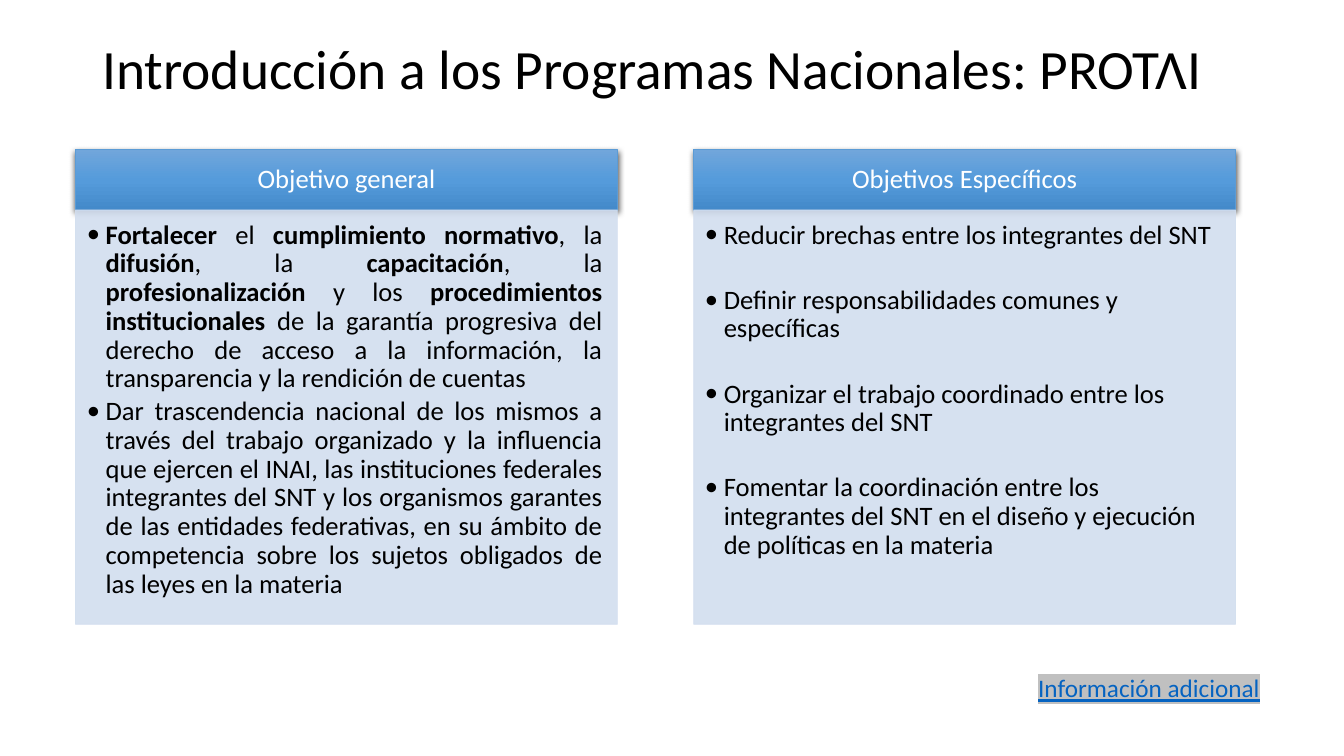
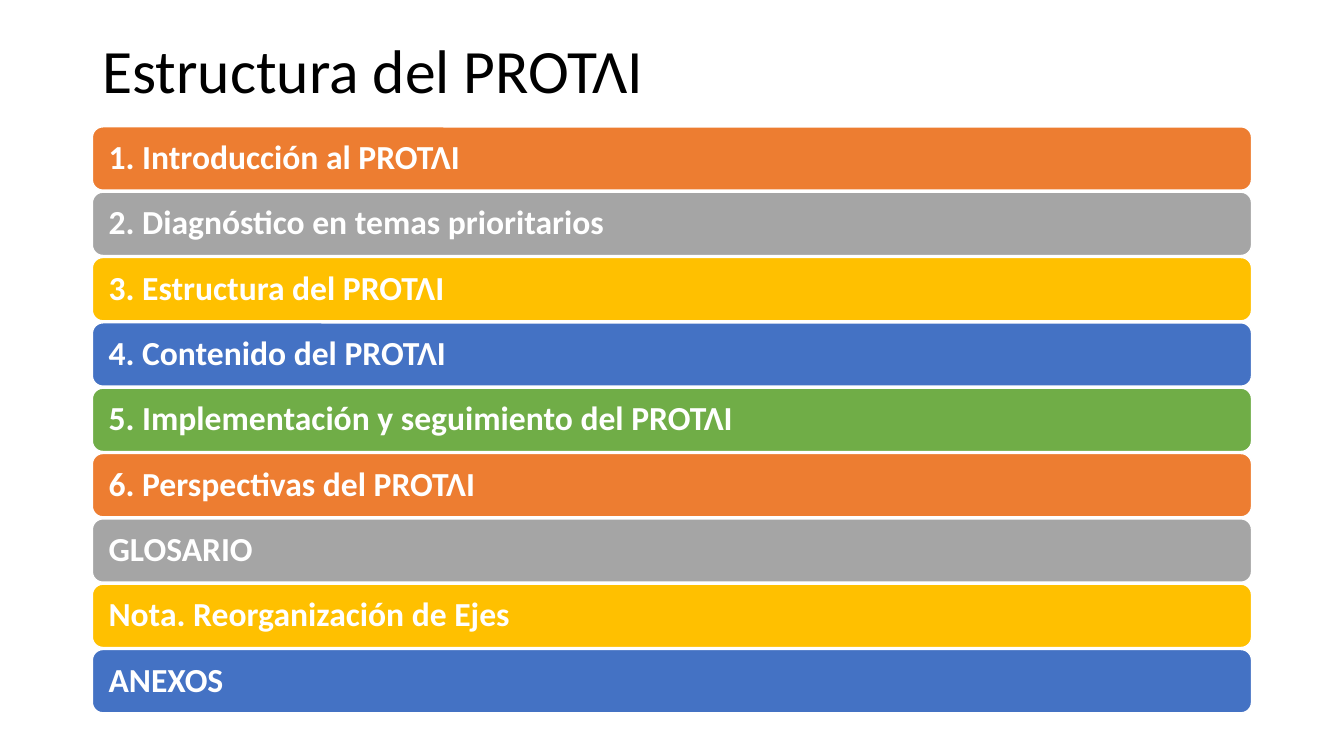
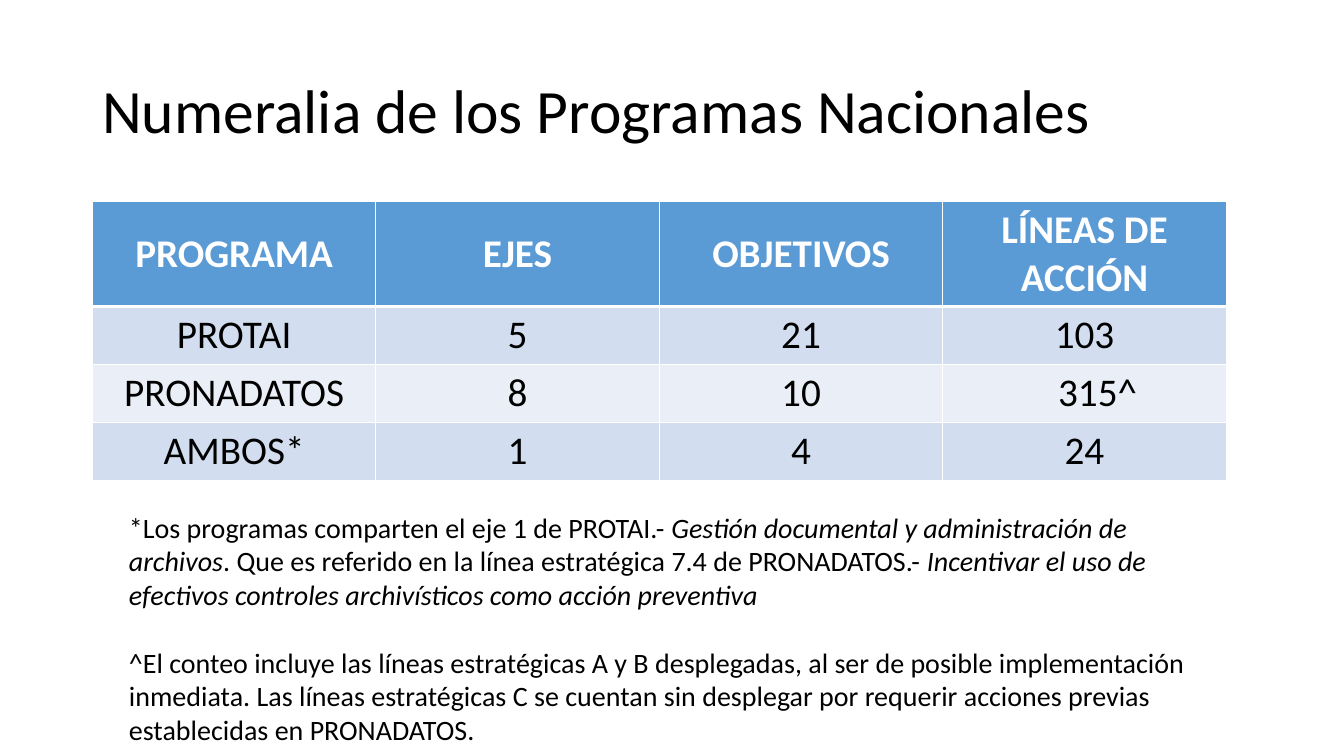
from lxml.etree import SubElement
from pptx import Presentation
from pptx.dml.color import RGBColor
from pptx.enum.shapes import MSO_SHAPE
from pptx.enum.text import MSO_ANCHOR, PP_ALIGN
from pptx.oxml import parse_xml
from pptx.oxml.ns import nsdecls, qn
from pptx.util import Pt

FONT = "Calibri"
BLACK = RGBColor(0x00, 0x00, 0x00)
WHITE = RGBColor(0xFF, 0xFF, 0xFF)
BLUE = RGBColor(0x5B, 0x9B, 0xD5)
PALE_BLUE = RGBColor(0xD2, 0xDE, 0xEF)
PALER_BLUE = RGBColor(0xEA, 0xEF, 0xF7)
LINK_BLUE = RGBColor(0x05, 0x63, 0xC1)
HIGHLIGHT = RGBColor(0xC0, 0xC0, 0xC0)
HEADER_GRADIENT = ((0, RGBColor(0x71, 0xA6, 0xDB)),
                   (50, RGBColor(0x55, 0x9B, 0xDB)),
                   (100, RGBColor(0x44, 0x8A, 0xCA)))
BAR_COLORS = (RGBColor(0xED, 0x7D, 0x31), RGBColor(0xA5, 0xA5, 0xA5),
              RGBColor(0xFF, 0xC0, 0x00), RGBColor(0x44, 0x72, 0xC4),
              RGBColor(0x70, 0xAD, 0x47))

MARGIN = 66
TITLE_WIDTH = 828

GENERAL_GOAL = [
    [("Fortalecer ", True), ("el ", False), ("cumplimiento normativo", True),
     (", la ", False), ("difusión", True), (", la ", False),
     ("capacitación", True), (", la ", False), ("profesionalización", True),
     (" y los ", False), ("procedimientos institucionales ", True),
     ("de la garantía progresiva del derecho de acceso a la información, la "
      "transparencia y la rendición de cuentas", False)],
    [("Dar trascendencia nacional de los mismos a través del trabajo organizado "
      "y la influencia que ejercen el INAI, las instituciones federales "
      "integrantes del SNT y los organismos garantes de las entidades "
      "federativas, en su ámbito de competencia sobre los sujetos obligados de "
      "las leyes en la materia", False)],
]
SPECIFIC_GOALS = [
    [("Reducir brechas entre los integrantes del SNT", False)],
    [("Definir responsabilidades comunes y específicas", False)],
    [("Organizar el trabajo coordinado entre los integrantes del SNT", False)],
    [("Fomentar la coordinación entre los integrantes del SNT en el diseño y "
      "ejecución de políticas en la materia", False)],
]
CHAPTERS = [
    "1. Introducción al PROTɅI",
    "2. Diagnóstico en temas prioritarios",
    "3. Estructura del PROTɅI",
    "4. Contenido del PROTɅI",
    "5. Implementación y seguimiento del PROTɅI",
    "6. Perspectivas del PROTɅI",
    "GLOSARIO",
    "Nota. Reorganización de Ejes",
    "ANEXOS",
]
FIGURES = [
    ("PROGRAMA", "EJES", "OBJETIVOS", "LÍNEAS DE ACCIÓN"),
    ("PROTAI", "5", "21", "103"),
    ("PRONADATOS", "8", "10", "315^"),
    ("AMBOS*", "1", "4", "24"),
]
FOOTNOTES = [
    [("*Los programas comparten el eje 1 de PROTAI.- ", False),
     ("Gestión documental y administración de archivos", True),
     (". Que es referido en la línea estratégica 7.4 de PRONADATOS.- ", False),
     ("Incentivar el uso de efectivos controles archivísticos como acción "
      "preventiva", True)],
    [("^El conteo incluye las líneas estratégicas A y B desplegadas, al ser de "
      "posible implementación inmediata. Las líneas estratégicas C se cuentan "
      "sin desplegar por requerir acciones previas establecidas en "
      "PRONADATOS.", False)],
]


def add_run(paragraph, text, size, color=BLACK, bold=False, italic=False):
    run = paragraph.add_run()
    run.text = text
    font = run.font
    font.name, font.size, font.bold, font.italic = FONT, Pt(size), bold, italic
    font.color.rgb = color
    return run


def set_frame(frame, anchor, insets=(7.2, 3.6, 7.2, 3.6)):
    frame.word_wrap = True
    frame.vertical_anchor = anchor
    (frame.margin_left, frame.margin_top,
     frame.margin_right, frame.margin_bottom) = map(Pt, insets)
    return frame


def add_text_box(slide, left, top, width, height, anchor=MSO_ANCHOR.TOP):
    box = slide.shapes.add_textbox(Pt(left), Pt(top), Pt(width), Pt(height))
    return set_frame(box.text_frame, anchor)


def add_block(slide, preset, left, top, width, height, line, line_width):
    block = slide.shapes.add_shape(preset, Pt(left), Pt(top), Pt(width), Pt(height))
    block.shadow.inherit = False
    block.line.color.rgb = line
    block.line.width = Pt(line_width)
    return block


def add_title(slide, text, top, height, size=44):
    frame = add_text_box(slide, MARGIN, top, TITLE_WIDTH, height, MSO_ANCHOR.MIDDLE)
    paragraph = frame.paragraphs[0]
    paragraph.line_spacing = 0.9
    add_run(paragraph, text, size)


def set_header_finish(header):
    """Give the header its three-stop gradient and soft lower shadow."""
    properties = header.fill._xPr
    stops = "".join(f'<a:gs pos="{pos * 1000}"><a:srgbClr val="{color}"/></a:gs>'
                    for pos, color in HEADER_GRADIENT)
    properties.find(qn("a:prstGeom")).addnext(parse_xml(
        f'<a:gradFill {nsdecls("a")} rotWithShape="1"><a:gsLst>{stops}</a:gsLst>'
        '<a:lin ang="5400000" scaled="0"/></a:gradFill>'))
    properties.find(qn("a:effectLst")).append(parse_xml(
        f'<a:outerShdw {nsdecls("a")} blurRad="{Pt(4.5)}" dist="{Pt(1.5)}" '
        'dir="5400000" algn="ctr" rotWithShape="0"><a:srgbClr val="000000">'
        '<a:alpha val="63000"/></a:srgbClr></a:outerShdw>'))


def set_opacity(fill_parent, percent):
    for color in fill_parent.iter(qn("a:srgbClr")):
        SubElement(color, qn("a:alpha")).set("val", str(percent * 1000))


def set_bullet(paragraph, indent):
    properties = paragraph._p.get_or_add_pPr()
    properties.set("marL", str(Pt(indent)))
    properties.set("indent", str(-Pt(indent)))
    SubElement(properties, qn("a:buFont")).set("typeface", FONT)
    SubElement(properties, qn("a:buChar")).set("char", "•")


def add_goal_panel(slide, left, top, width, heading, goals, gap, align):
    header_height, body_height, size = 43, 296, 19
    header = add_block(slide, MSO_SHAPE.RECTANGLE, left, top, width,
                       header_height, BLUE, 0.5)
    set_header_finish(header)
    frame = set_frame(header.text_frame, MSO_ANCHOR.MIDDLE, (10.8, 5.8, 10.8, 5.8))
    paragraph = frame.paragraphs[0]
    paragraph.alignment = PP_ALIGN.CENTER
    paragraph.line_spacing = 0.9
    add_run(paragraph, heading, size, WHITE)

    body = add_block(slide, MSO_SHAPE.RECTANGLE, left, top + header_height, width,
                     body_height, PALE_BLUE, 0.5)
    body.fill.solid()
    body.fill.fore_color.rgb = PALE_BLUE
    set_opacity(body.fill._xPr, 90)
    frame = set_frame(body.text_frame, MSO_ANCHOR.TOP, (8, 8, 10.8, 12))
    for index, goal in enumerate(goals):
        paragraph = frame.add_paragraph() if index else frame.paragraphs[0]
        set_bullet(paragraph, 13.5)
        paragraph.alignment = align
        paragraph.line_spacing = 0.9
        paragraph.space_after = Pt(gap)
        for text, bold in goal:
            add_run(paragraph, text, size, bold=bold)


def add_more_info(slide, left, top, width, height):
    frame = add_text_box(slide, left, top, width, height)
    run = add_run(frame.paragraphs[0], "Información adicional", 18, LINK_BLUE)
    run.font.underline = True
    run._r.rPr.find(qn("a:solidFill")).addnext(parse_xml(
        f'<a:highlight {nsdecls("a")}><a:srgbClr val="{HIGHLIGHT}"/></a:highlight>'))


def add_chapter_bars(slide, left, top, width, pitch, height):
    for index, chapter in enumerate(CHAPTERS):
        bar = add_block(slide, MSO_SHAPE.ROUNDED_RECTANGLE, left,
                        top + index * pitch, width, height, WHITE, 1)
        bar.fill.solid()
        bar.fill.fore_color.rgb = BAR_COLORS[index % len(BAR_COLORS)]
        frame = set_frame(bar.text_frame, MSO_ANCHOR.MIDDLE, (9.4, 7.2, 9.4, 7.2))
        paragraph = frame.paragraphs[0]
        paragraph.alignment = PP_ALIGN.LEFT
        paragraph.line_spacing = 0.9
        add_run(paragraph, chapter, 24, WHITE, bold=True)


def set_borders(cell, **widths):
    properties = cell._tc.get_or_add_tcPr()
    for side in "LRTB":
        properties.append(parse_xml(
            f'<a:ln{side} {nsdecls("a")} w="{Pt(widths.get(side, 1))}"><a:solidFill>'
            f'<a:srgbClr val="{WHITE}"/></a:solidFill></a:ln{side}>'))


def add_figures_table(slide, left, top, width, header_height, row_height):
    height = header_height + row_height * (len(FIGURES) - 1)
    table = slide.shapes.add_table(len(FIGURES), len(FIGURES[0]), Pt(left), Pt(top),
                                   Pt(width), Pt(height)).table
    for column in table.columns:
        column.width = Pt(width / len(FIGURES[0]))
    for row, values in enumerate(FIGURES):
        is_header = row == 0
        table.rows[row].height = Pt(header_height if is_header else row_height)
        for column, value in enumerate(values):
            cell = table.cell(row, column)
            set_borders(cell, T=3 if row == 1 else 1, B=3 if is_header else 1)
            cell.fill.solid()
            cell.fill.fore_color.rgb = (BLUE if is_header else
                                        PALE_BLUE if row % 2 else PALER_BLUE)
            cell.vertical_anchor = MSO_ANCHOR.MIDDLE
            if value.endswith("^"):
                cell.margin_left = Pt(26)
            paragraph = cell.text_frame.paragraphs[0]
            paragraph.alignment = PP_ALIGN.CENTER
            add_run(paragraph, value, 28, WHITE if is_header else BLACK, is_header)


def add_footnotes(slide, left, top, width, height):
    frame = add_text_box(slide, left, top, width, height)
    for index, note in enumerate(FOOTNOTES):
        paragraph = frame.add_paragraph() if index else frame.paragraphs[0]
        if index:
            paragraph.space_before = Pt(24.4)
        for text, italic in note:
            add_run(paragraph, text, 20, italic=italic)


def build_goals_slide(slide):
    add_title(slide, "Introducción a los Programas Nacionales: PROTɅI", 15, 72, 39.6)
    left, top, width, gutter = 54, 107, 387, 54.5
    add_goal_panel(slide, left, top, width, "Objetivo general", GENERAL_GOAL, 3,
                   PP_ALIGN.JUSTIFY)
    add_goal_panel(slide, left + width + gutter, top, width, "Objetivos Específicos",
                   SPECIFIC_GOALS, 26, PP_ALIGN.LEFT)
    add_more_info(slide, 734.5, 476.8, 194, 29)


def build_structure_slide(slide):
    add_title(slide, "Estructura del PROTɅI", 0, 104.4)
    add_chapter_bars(slide, MARGIN, 90.6, TITLE_WIDTH, 46.67, 45.2)


def build_figures_slide(slide):
    add_title(slide, "Numeralia de los Programas Nacionales", 28.8, 104.4)
    add_figures_table(slide, MARGIN, 144, 810, 75, 41.4)
    add_footnotes(slide, 85, 361, 795, 177)


def main():
    deck = Presentation()
    deck.slide_width, deck.slide_height = Pt(960), Pt(540)
    blank = deck.slide_layouts[6]
    for build in (build_goals_slide, build_structure_slide, build_figures_slide):
        build(deck.slides.add_slide(blank))
    deck.save("out.pptx")


if __name__ == "__main__":
    main()
